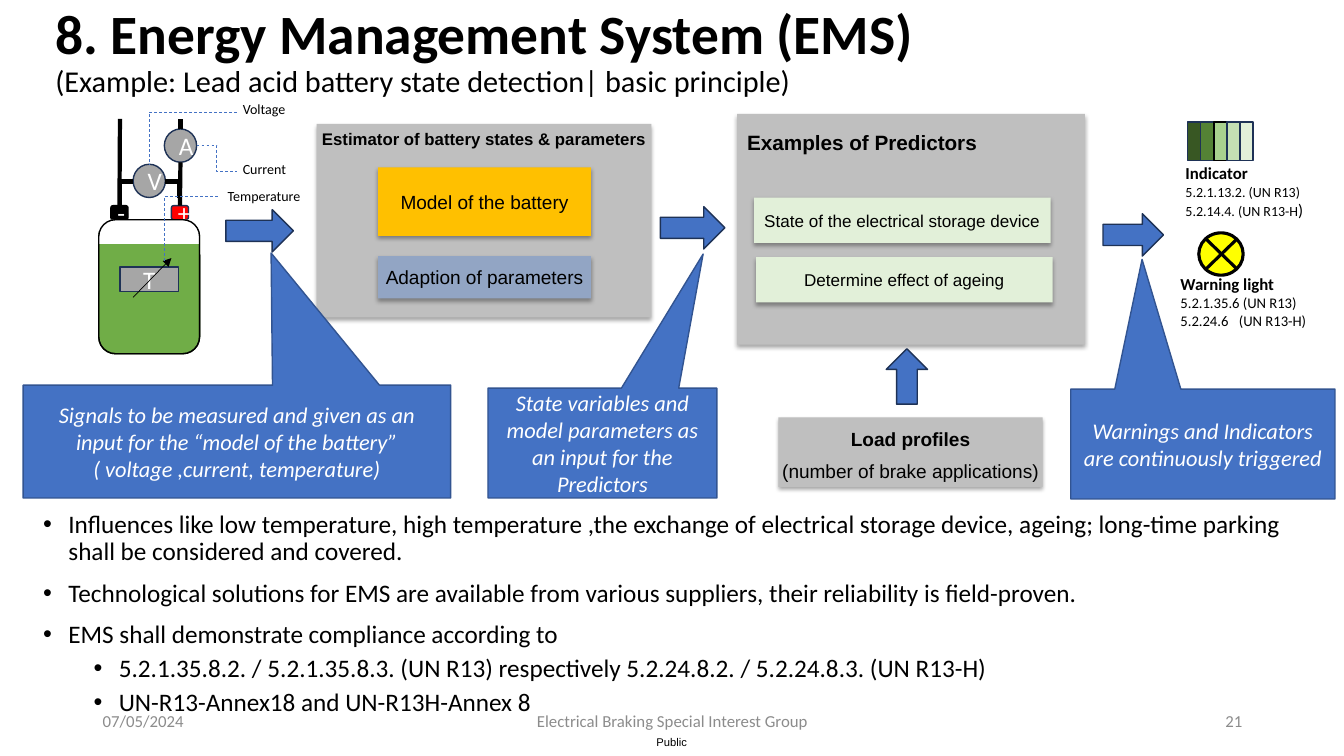
from lxml import etree
from pptx import Presentation
from pptx import util as u
from pptx.dml.color import RGBColor
from pptx.enum import dml, shapes, text
from pptx.oxml import ns

PX = 9144
BLACK, WHITE = RGBColor(0, 0, 0), RGBColor(255, 255, 255)
GREY, METER = RGBColor(0xBF, 0xBF, 0xBF), RGBColor(0xA6, 0xA6, 0xA6)
FOOTER = RGBColor(0x8C, 0x8C, 0x8C)
BLUE, NAVY, EDGE = RGBColor(0x44, 0x72, 0xC4), RGBColor(0x1E, 0x32, 0x56), RGBColor(0x32, 0x54, 0x91)
AMBER, STEEL, PALE = RGBColor(0xFF, 0xC0, 0), RGBColor(0x92, 0xA5, 0xC4), RGBColor(0xE2, 0xF0, 0xD9)
RED, YELLOW = RGBColor(255, 0, 0), RGBColor(255, 255, 0)
ACID, MOSS = RGBColor(0x70, 0xAD, 0x47), RGBColor(0x31, 0x4C, 0x1F)
CHARGE = [RGBColor(0x38, 0x57, 0x23), RGBColor(0x54, 0x82, 0x35), RGBColor(0xA9, 0xD1, 0x8E),
          RGBColor(0xC5, 0xE0, 0xB4), PALE]
SHAPE, ALIGN, ANCHOR = shapes.MSO_SHAPE, text.PP_ALIGN, text.MSO_ANCHOR
MIDDLE, TOP = ANCHOR.MIDDLE, ANCHOR.TOP
LEFT, CENTER, RIGHT = ALIGN.LEFT, ALIGN.CENTER, ALIGN.RIGHT


def px(*values):
    """Turn px lengths into EMU."""
    return [u.Emu(v * PX) for v in values]


def child(parent, tag, **attrs):
    """Append a DrawingML element."""
    return etree.SubElement(parent, ns.qn(tag), {k: str(v) for k, v in attrs.items()})


def write(sp, paras, size=12, name="Calibri", color=BLACK, align=LEFT, anchor=TOP,
          wrap=True, italic=False, inset=None, **para):
    """Fill a shape with paragraphs, each a string or a list of (text, font values)."""
    tf = sp.text_frame
    tf.word_wrap, tf.vertical_anchor = wrap, anchor
    if inset is not None:
        for side in ("left", "right", "top", "bottom"):
            setattr(tf, f"margin_{side}", inset)
    for i, runs in enumerate(paras):
        p = tf.paragraphs[0] if i == 0 else tf.add_paragraph()
        for key, value in dict(para, alignment=align).items():
            setattr(p, key, value)
        for words, extra in [(runs, {})] if isinstance(runs, str) else runs:
            r = p.add_run()
            r.text = words
            values = dict(dict(size=size, name=name, italic=italic, bold=False), **extra)
            values["size"] = u.Pt(values["size"])
            for key, value in values.items():
                setattr(r.font, key, value)
            r.font.color.rgb = color
    return tf


def label(s, box, paras, **fmt):
    """Add a text box."""
    return write(s.shapes.add_textbox(*px(*box)), paras, **fmt)


def block(s, kind, box, fill=None, line=None, width=1, adj=(), shadow=False):
    """Add a preset shape."""
    sp = s.shapes.add_shape(kind, *px(*box))
    sp.shadow.inherit = False
    if fill is None:
        sp.fill.background()
    else:
        sp.fill.solid()
        sp.fill.fore_color.rgb = fill
    if line is None:
        sp.line.fill.background()
    else:
        sp.line.color.rgb, sp.line.width = line, u.Pt(width)
    for i, value in enumerate(adj):
        sp.adjustments[i] = value
    if shadow:
        effects = sp._element.spPr.find(ns.qn("a:effectLst"))
        outer = child(effects, "a:outerShdw", blurRad=u.Pt(3.1), dist=u.Pt(1.8), dir=5400000,
                      algn="t", rotWithShape=0)
        child(child(outer, "a:srgbClr", val=BLACK), "a:alpha", val=35000)
    return sp


def panel(s, box, fill, paras=(), **fmt):
    """Add a shadowed box with Arial text."""
    sp = block(s, SHAPE.RECTANGLE, box, fill, shadow=True)
    write(sp, paras, **dict(dict(name="Arial", align=CENTER, anchor=MIDDLE, wrap=False), **fmt))


def wire(s, x1, y1, x2, y2, width=3, color=BLACK, bend=None, dash=False, arrow=False):
    """Add a straight or bent connector."""
    kind = shapes.MSO_CONNECTOR.ELBOW if bend else shapes.MSO_CONNECTOR.STRAIGHT
    c = s.shapes.add_connector(kind, *px(x1, y1, x2, y2))
    c.line.color.rgb, c.line.width = color, u.Pt(width)
    spPr = c._element.spPr
    if bend:
        spPr.find(ns.qn("a:prstGeom")).set("prst", bend)
    if dash:
        c.line.dash_style = dml.MSO_LINE.DASH
    if arrow:
        child(c.line._get_or_add_ln(), "a:tailEnd", type="triangle")
    child(spPr, "a:effectLst")
    return c


def header(s, x, y, w, h):
    """Title and subtitle."""
    label(s, (x, y, w, h), [[("8. Energy Management System (EMS)", dict(size=39.6, bold=True))],
                            "(Example: Lead acid battery state detection| basic principle)"],
          size=21.6, anchor=MIDDLE, line_spacing=0.9)


def footer(s, x, y, h):
    """Date, group name, page number and classification."""
    for dx, w, words, align in ((0, 300, "07/05/2024", LEFT),
                                (350, 450, "Electrical Braking Special Interest Group", CENTER),
                                (850, 300, "21", RIGHT)):
        label(s, (x + dx, y, w, h), [words], color=FOOTER, align=align, anchor=MIDDLE)
    label(s, (x + 559, y + 35, 34, 13), ["Public"], size=8, name="Arial", inset=0, wrap=False)


def bullets(s, x, y, w, h):
    """Two-level bullet list."""
    items = [
        (0, "Influences like low temperature, high temperature ,the exchange of electrical storage "
            "device, ageing; long-time parking shall be considered and covered."),
        (0, "Technological solutions for EMS are available from various suppliers, "
            "their reliability is field-proven."),
        (0, "EMS shall demonstrate compliance according to"),
        (1, "5.2.1.35.8.2. / 5.2.1.35.8.3. (UN R13) respectively 5.2.24.8.2. / 5.2.24.8.3. (UN R13-H)"),
        (1, "UN-R13-Annex18 and UN-R13H-Annex 8")]
    tf = label(s, (x, y, w, h), [words for _, words in items], size=18, line_spacing=0.9)
    for p, (level, _) in zip(tf.paragraphs, items):
        p.level, p.space_before = level, u.Pt(5 if level else 10)
        pPr = p._p.get_or_add_pPr()
        pPr.set("marL", str((25 + 50 * level) * PX))
        pPr.set("indent", str(-25 * PX))
        child(pPr, "a:buFont", typeface="Arial")
        child(pPr, "a:buChar", char="•")


def estimator(s, x, y, w, h):
    """Estimator panel with its two steps."""
    panel(s, (x, y, w, h), GREY, [[("Estimator of battery states & parameters", dict(bold=True))]],
          anchor=TOP)
    panel(s, (x + 61, y + 43, 211, 68), AMBER, ["Model of the battery"], size=13.6)
    panel(s, (x + 61, y + 131, 211, 42), STEEL, ["Adaption of parameters"], size=13.6)


def predictors(s, x, y, w, h):
    """Predictor panel, and the load profiles that feed it."""
    panel(s, (x, y, w, h), GREY)
    label(s, (x - 3, y + 11, 254, 36), [[("Examples of Predictors", dict(bold=True))]],
          size=14.8, name="Arial", align=CENTER, wrap=False)
    panel(s, (x + 17, y + 83, 294, 45), PALE, ["State of the electrical storage device"], size=12.2)
    panel(s, (x + 19, y + 142, 294, 45), PALE, ["Determine effect of ageing"], size=12.2)
    panel(s, (x + 41, y + 301, 262, 69), GREY,
          [[("Load profiles", dict(bold=True))], "(number of brake applications)"],
          size=13.6, line_spacing=u.Pt(20), space_before=u.Pt(3))
    block(s, SHAPE.RIGHT_ARROW, (x + 141, y + 240, 55, 41), BLUE, NAVY).rotation = 270


def flow_step(s, arrow, box, tip, paras):
    """Flow arrow with the callout that explains it."""
    block(s, SHAPE.RIGHT_ARROW, arrow, BLUE, NAVY)
    sp = block(s, SHAPE.RECTANGULAR_CALLOUT, box, BLUE, EDGE, adj=tip)
    write(sp, paras, size=16, color=WHITE, italic=True, align=CENTER, anchor=MIDDLE)


def indicators(s, x, y):
    """Charge indicator and warning light."""
    for i, shade in enumerate(CHARGE):
        block(s, SHAPE.RECTANGLE, (x + 13 * i, y, 13, 38), shade, BLACK if i == 2 else NAVY)
    label(s, (x - 12, y + 36, 147, 70), [[("Indicator", dict(size=12, bold=True))],
          "5.2.1.13.2. (UN R13)", [("5.2.14.4. (UN R13-H", {}), (")", dict(size=12))]], size=10)
    tf = label(s, (x - 17, y + 146, 147, 68), [[("Warning light", dict(size=12, bold=True))],
               "5.2.1.35.6 (UN R13)", "5.2.24.6\t(UN R13-H)"], size=10.5)
    tabs = child(tf.paragraphs[2]._p.get_or_add_pPr(), "a:tabLst")
    child(tabs, "a:tab", pos=58 * PX, algn="l")
    block(s, SHAPE.OVAL, (x + 11, y + 110, 44, 42), YELLOW, BLACK, 2.25)
    for start, end in ((18, 49), (49, 18)):
        wire(s, x + start, y + 146, x + end, y + 116, 2.25)


def battery(s, x, y, w, h):
    """Battery with its terminals, meters, wiring and signal names."""
    def part(kind, box, sign, fill, line=NAVY):
        sp = block(s, kind, (x + box[0], y + box[1], *box[2:]), fill, line)
        write(sp, [sign], size=18, color=WHITE, align=CENTER, anchor=MIDDLE)
        return sp

    block(s, SHAPE.ROUNDED_RECTANGLE, (x, y, w, h), ACID, MOSS)
    minus = part(SHAPE.ROUNDED_RECTANGLE, (12, -14, 17, 14), "-", BLACK, BLACK)
    plus = part(SHAPE.ROUNDED_RECTANGLE, (72, -14, 17, 14), "+", RED)
    block(s, SHAPE.ROUNDED_RECTANGLE, (x, y, w, 24), WHITE, adj=[0])
    block(s, SHAPE.ROUNDED_RECTANGLE, (x, y, w, h), None, BLACK)
    part(SHAPE.OVAL, (34, -55, 32, 33), "V", METER)
    part(SHAPE.RECTANGLE, (21, 47, 58, 24), "T", METER)
    ammeter = part(SHAPE.OVAL, (65, -90, 32, 33), "A", METER)
    for sp, x1, y1, x2, y2 in ((plus, 80, -14, 81, -57), (minus, 21, -14, 21, -100),
                               (ammeter, 81, -90, 81, -100)):
        wire(s, x + x1, y + y1, x + x2, y + y2).begin_connect(sp, 0)
    for x1, y1, x2, y2 in ((66, -38, 80, -22), (34, -38, 21, -14)):
        wire(s, x + x1, y + y1, x + x2, y + y2, bend="bentConnector2")
    wire(s, x + 34, y + 77, x + 72, y + 38, 0.5, arrow=True)
    for x1, y1, x2, y2, bend in ((137, -107, 50, -55, 2), (97, -74, 137, -48, 3),
                                 (118, -23, 65, 42, 2)):
        wire(s, x + x1, y + y1, x + x2, y + y2, 0.5, BLUE, f"bentConnector{bend}", dash=True)
    for dx, dy, width, signal in ((133, -123, 69, "Voltage"), (133, -64, 69, "Current"),
                                  (118, -37, 96, "Temperature")):
        label(s, (x + dx, y + dy, width, 28), [signal], size=10)


def main():
    """Build the slide."""
    prs = Presentation()
    prs.slide_width, prs.slide_height = px(1333, 750)
    s = prs.slides.add_slide(prs.slide_layouts[6])
    header(s, 45, 4, 1006, 97)
    footer(s, 92, 695, 40)
    bullets(s, 33, 503, 1279, 205)
    estimator(s, 314, 123, 332, 192)
    predictors(s, 731, 113, 345, 229)
    flow_step(s, (224, 208, 67, 42), (23, 382, 424, 112), (0.08, -1.67),
              ["Signals to be measured and given as an input for the “model of the battery”",
               "( voltage ,current, temperature)"])
    flow_step(s, (655, 205, 64, 42), (484, 385, 227, 109), (0.44, -1.72),
              ["State variables and model parameters as an input for the Predictors"])
    flow_step(s, (1094, 212, 60, 42), (1062, 386, 262, 109), (-0.23, -1.68),
              ["Warnings and Indicators are continuously triggered"])
    indicators(s, 1178, 121)
    battery(s, 98, 218, 100, 133)
    prs.save("out.pptx")


if __name__ == "__main__":
    main()
